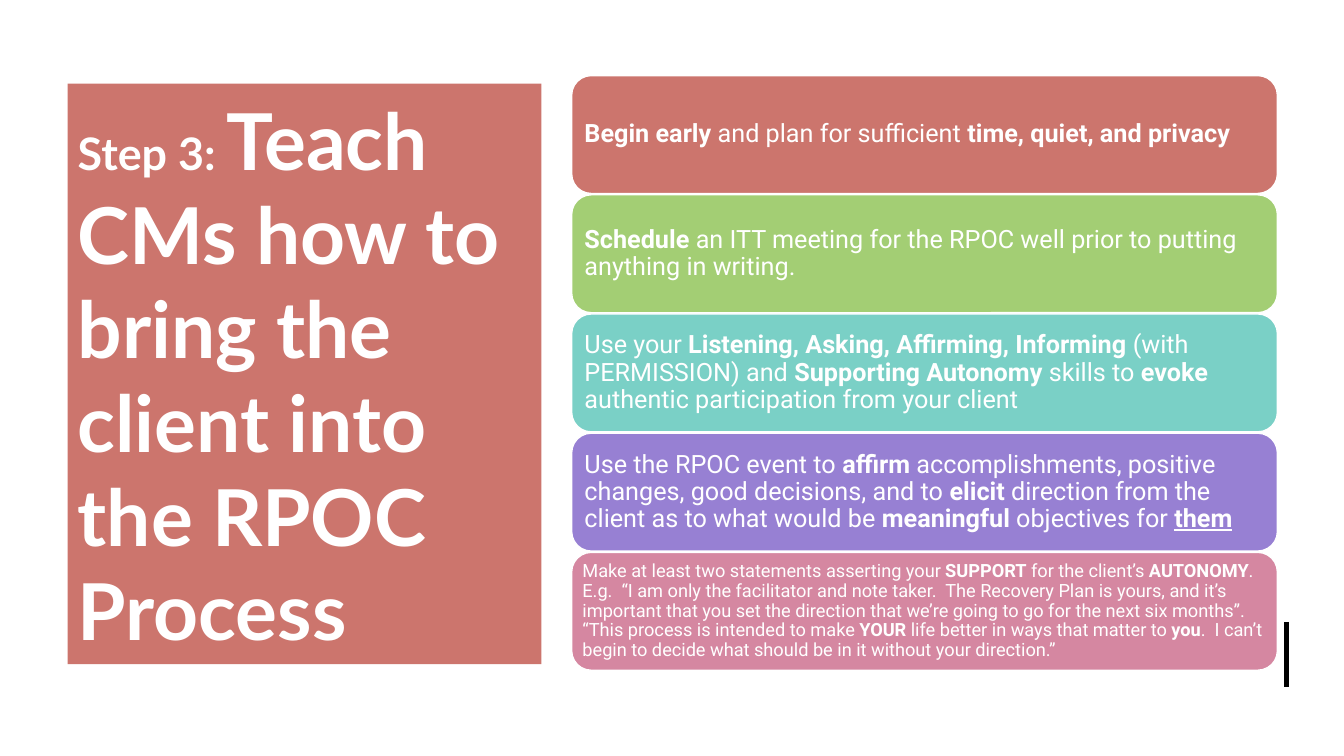
"""Build the slide on bringing the client into the RPOC process."""
import lxml.etree
import pptx
import pptx.dml.color
import pptx.enum.shapes
import pptx.enum.text
import pptx.oxml.ns
import pptx.util

Inches = pptx.util.Inches
WHITE = pptx.dml.color.RGBColor(0xFF, 0xFF, 0xFF)
BLACK = pptx.dml.color.RGBColor(0x00, 0x00, 0x00)
RED = pptx.dml.color.RGBColor(0xCC, 0x75, 0x6D)
GREEN = pptx.dml.color.RGBColor(0xA3, 0xCE, 0x74)
TEAL = pptx.dml.color.RGBColor(0x7A, 0xD0, 0xC6)
PURPLE = pptx.dml.color.RGBColor(0x97, 0x80, 0xD3)
PINK = pptx.dml.color.RGBColor(0xD5, 0x87, 0xA1)

PLAIN, BOLD, UNDERLINED = "plain", "bold", "underlined"
CARDS = [
    (RED, 18, 0.07, [
        ("Begin early ", BOLD),
        ("and plan for sufficient ", PLAIN),
        ("time, quiet, and privacy", BOLD)]),
    (GREEN, 18, 0.07, [
        ("Schedule ", BOLD),
        ("an ITT meeting for the RPOC well prior to putting anything in writing.", PLAIN)]),
    (TEAL, 18, 0.07, [
        ("Use your ", PLAIN),
        ("Listening, Asking, Affirming, Informing ", BOLD),
        ("(with PERMISSION) and ", PLAIN),
        ("Supporting Autonomy", BOLD),
        (" skills to ", PLAIN),
        ("evoke", BOLD),
        (" authentic participation from your client", PLAIN)]),
    (PURPLE, 18, 0.07, [
        ("Use the RPOC event to ", PLAIN),
        ("affirm", BOLD),
        (" accomplishments, positive changes, good decisions, and to ", PLAIN),
        ("elicit", BOLD),
        (" direction from the client as to what would be ", PLAIN),
        ("meaningful", BOLD),
        (" objectives for ", PLAIN),
        ("them", UNDERLINED)]),
    (PINK, 13, 0.05, [
        ("Make at least two statements asserting your ", PLAIN),
        ("SUPPORT", BOLD),
        (" for the client’s ", PLAIN),
        ("AUTONOMY", BOLD),
        (".  E.g.  “I am only the facilitator and note taker.  The Recovery Plan is yours, "
         "and it’s important that you set the direction that we’re going to go for the next "
         "six months”.  “This process is intended to make ", PLAIN),
        ("YOUR", BOLD),
        (" life better in ways that matter to ", PLAIN),
        ("you", BOLD),
        (".  I can’t begin to decide what should be in it without your direction.”", PLAIN)]),
]


def add_run(paragraph, text, font_name, size, style):
    """Append one white run in the given style."""
    run = paragraph.add_run()
    run.text = text
    run.font.name = font_name
    run.font.size = pptx.util.Pt(size)
    run.font.color.rgb = WHITE
    run.font.bold = style != PLAIN
    if style == UNDERLINED:
        run.font.underline = True


def set_fill(shape, color):
    """Fill a shape with one colour."""
    shape.fill.solid()
    shape.fill.fore_color.rgb = color


def place_title(slide, left, top, width, height):
    """Turn the title placeholder into the red panel."""
    title = slide.shapes.title
    title.left, title.top = Inches(left), Inches(top)
    title.width, title.height = Inches(width), Inches(height)
    set_fill(title, RED)
    frame = title.text_frame
    frame.word_wrap = True
    frame.auto_size = pptx.enum.text.MSO_AUTO_SIZE.NONE
    frame.vertical_anchor = pptx.enum.text.MSO_ANCHOR.MIDDLE
    paragraph = frame.paragraphs[0]
    paragraph.alignment = pptx.enum.text.PP_ALIGN.LEFT
    add_run(paragraph, "Step 3: ", "Lato", 32, BOLD)
    add_run(paragraph, "Teach CMs how to bring the client into the RPOC Process", "Lato", 56, BOLD)


def add_card(slide, left, top, width, height, card):
    """Add one rounded card with its text."""
    color, size, inset, runs = card
    shape = slide.shapes.add_shape(
        pptx.enum.shapes.MSO_SHAPE.ROUNDED_RECTANGLE,
        Inches(left), Inches(top), Inches(width), Inches(height))
    shape.shadow.inherit = False
    set_fill(shape, color)
    shape.line.color.rgb = WHITE
    shape.line.width = pptx.util.Pt(1)
    frame = shape.text_frame
    frame.word_wrap = True
    frame.vertical_anchor = pptx.enum.text.MSO_ANCHOR.MIDDLE
    frame.margin_left = frame.margin_right = Inches(inset)
    frame.margin_top = frame.margin_bottom = Inches(inset)
    paragraph = frame.paragraphs[0]
    paragraph.alignment = pptx.enum.text.PP_ALIGN.LEFT
    paragraph.line_spacing = 0.9
    for text, style in runs:
        add_run(paragraph, text, "Roboto", size, style)


def add_cards(slide, left, top, width, height):
    """Stack the cards evenly in the given box."""
    card_height = 1.17
    step = (height - card_height) / (len(CARDS) - 1)
    for index, card in enumerate(CARDS):
        add_card(slide, left, top + index * step, width, card_height, card)


def add_accent_line(slide, left, top, height):
    """Add the short black vertical line."""
    line = slide.shapes.add_connector(
        pptx.enum.shapes.MSO_CONNECTOR.STRAIGHT,
        Inches(left), Inches(top), Inches(left), Inches(top + height))
    line.line.color.rgb = BLACK
    line.line.width = pptx.util.Pt(3)
    properties = line._element.spPr
    lxml.etree.SubElement(properties, pptx.oxml.ns.qn("a:effectLst"))


def main():
    """Build and save the presentation."""
    presentation = pptx.Presentation()
    presentation.slide_width = Inches(13.33)
    presentation.slide_height = Inches(7.5)
    slide = presentation.slides.add_slide(presentation.slide_layouts.get_by_name("Title Only"))
    add_accent_line(slide, 12.76, 6.17, 0.65)
    add_cards(slide, 5.67, 0.75, 7, 5.9)
    place_title(slide, 0.67, 0.83, 4.7, 5.76)
    presentation.save("out.pptx")


if __name__ == "__main__":
    main()
